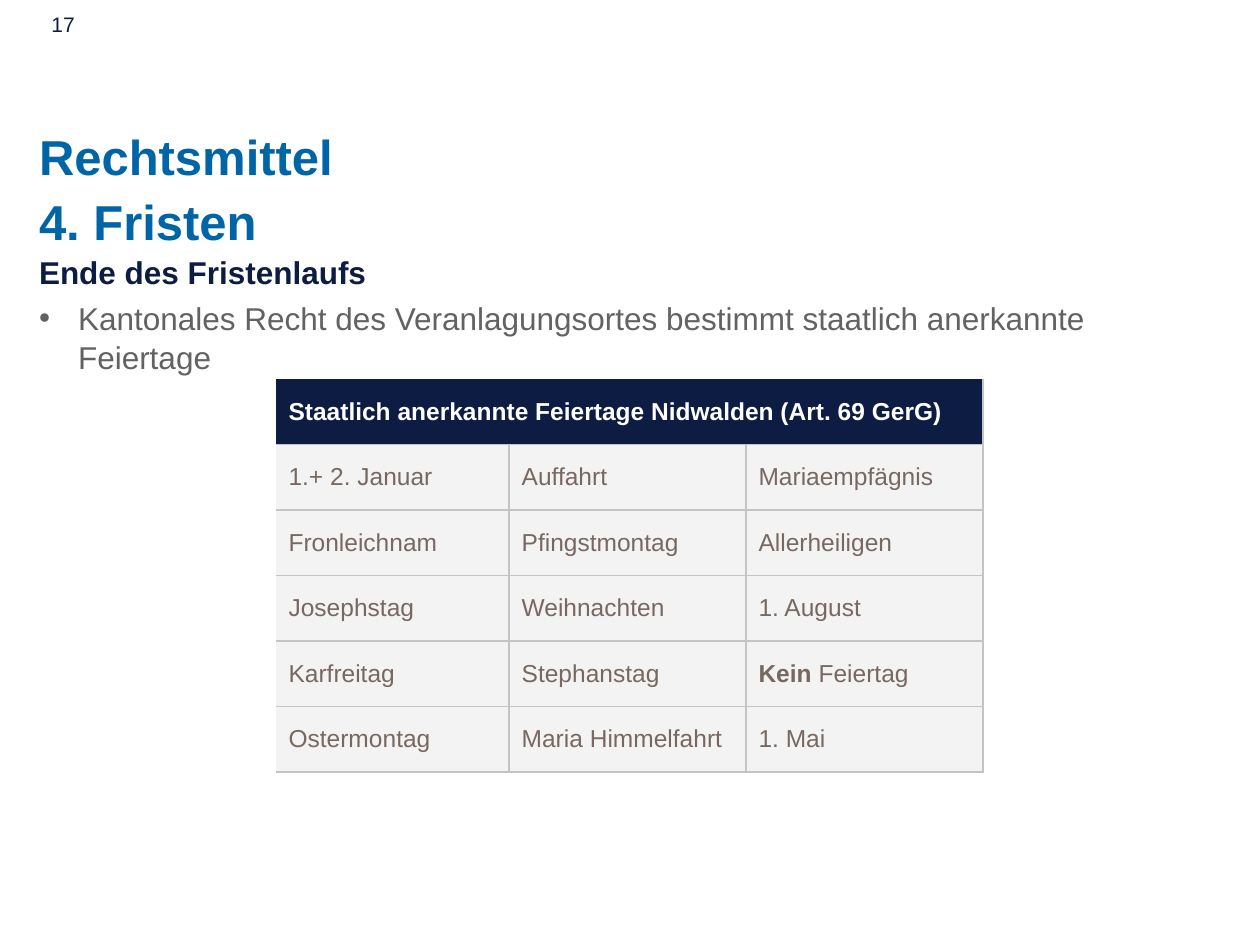
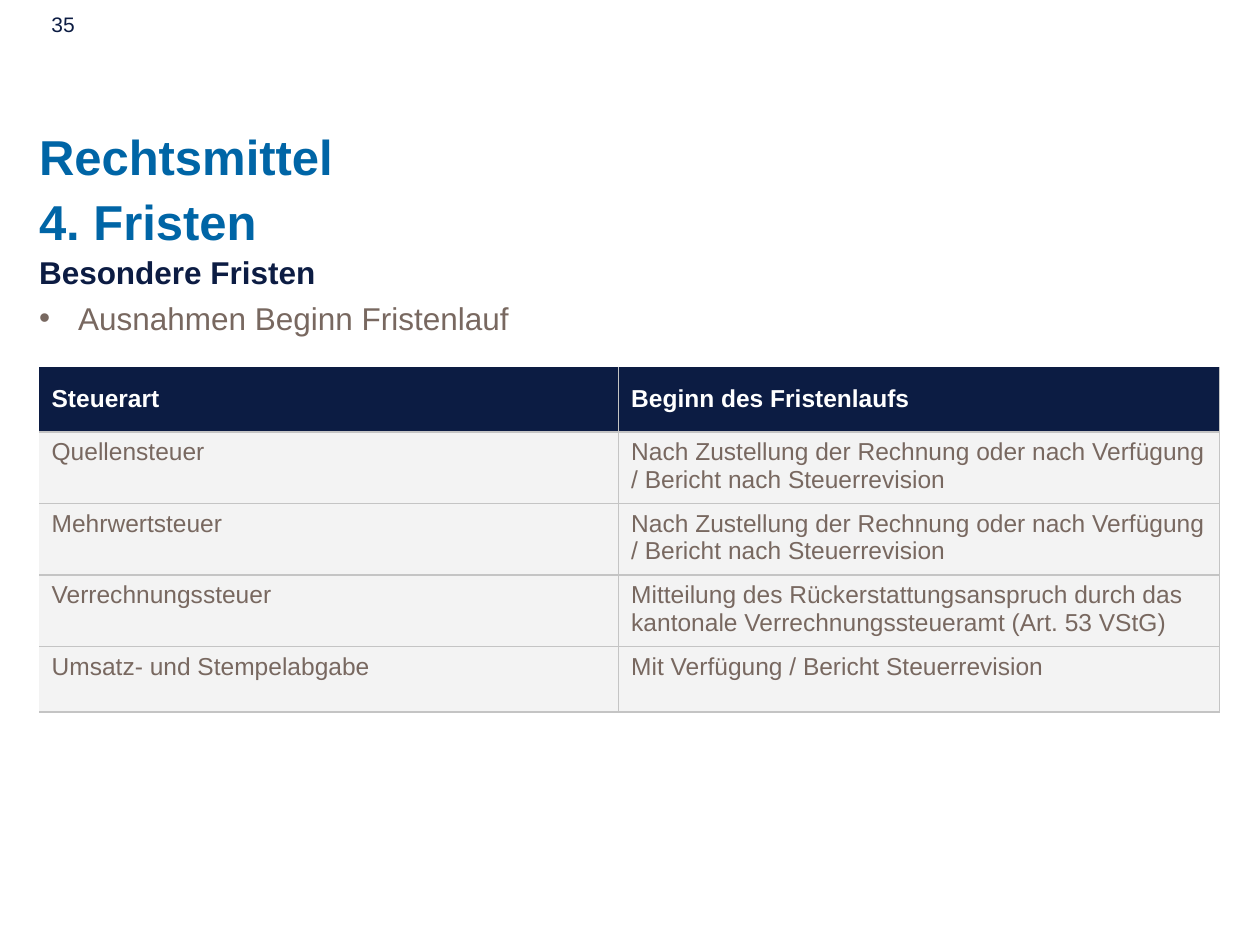
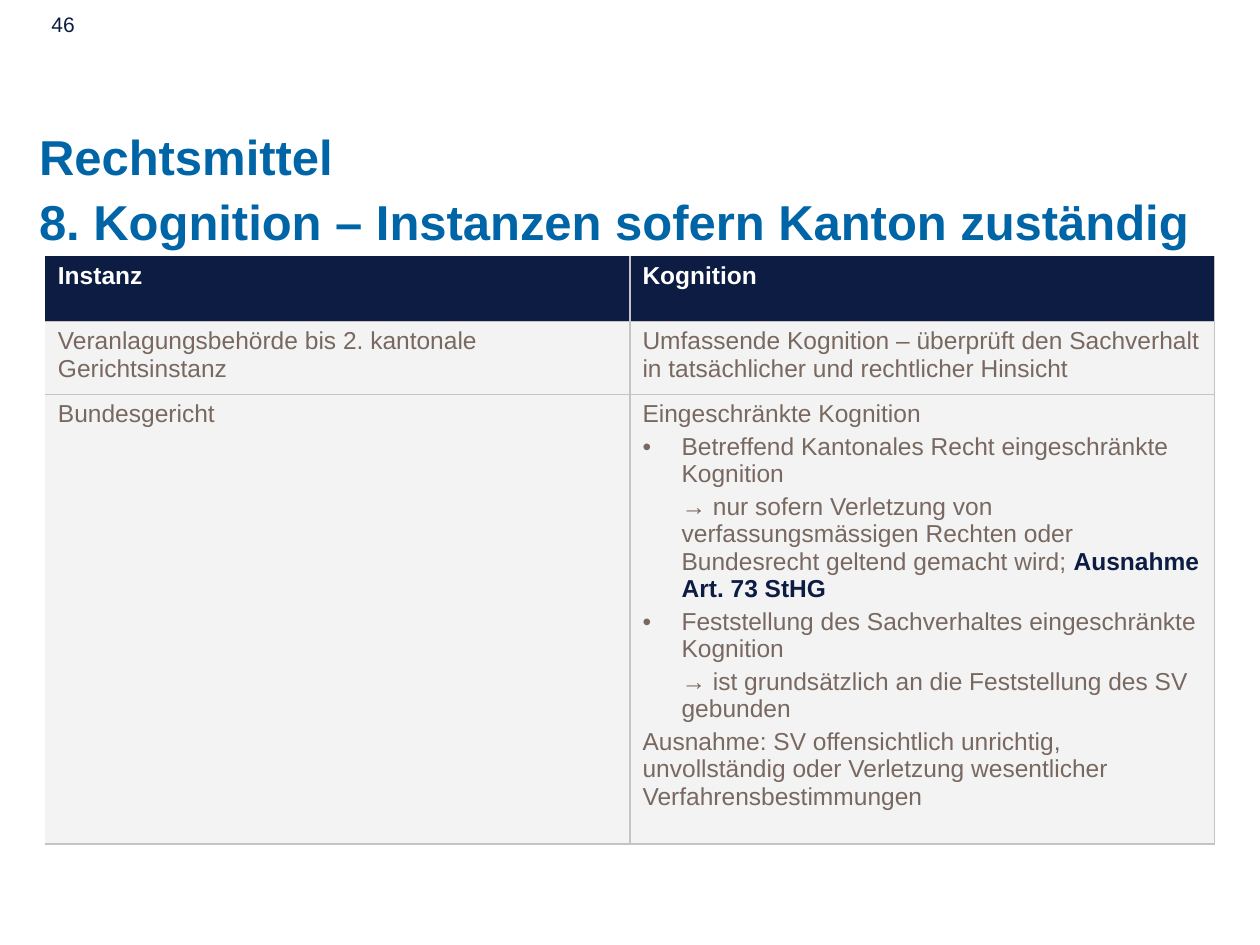
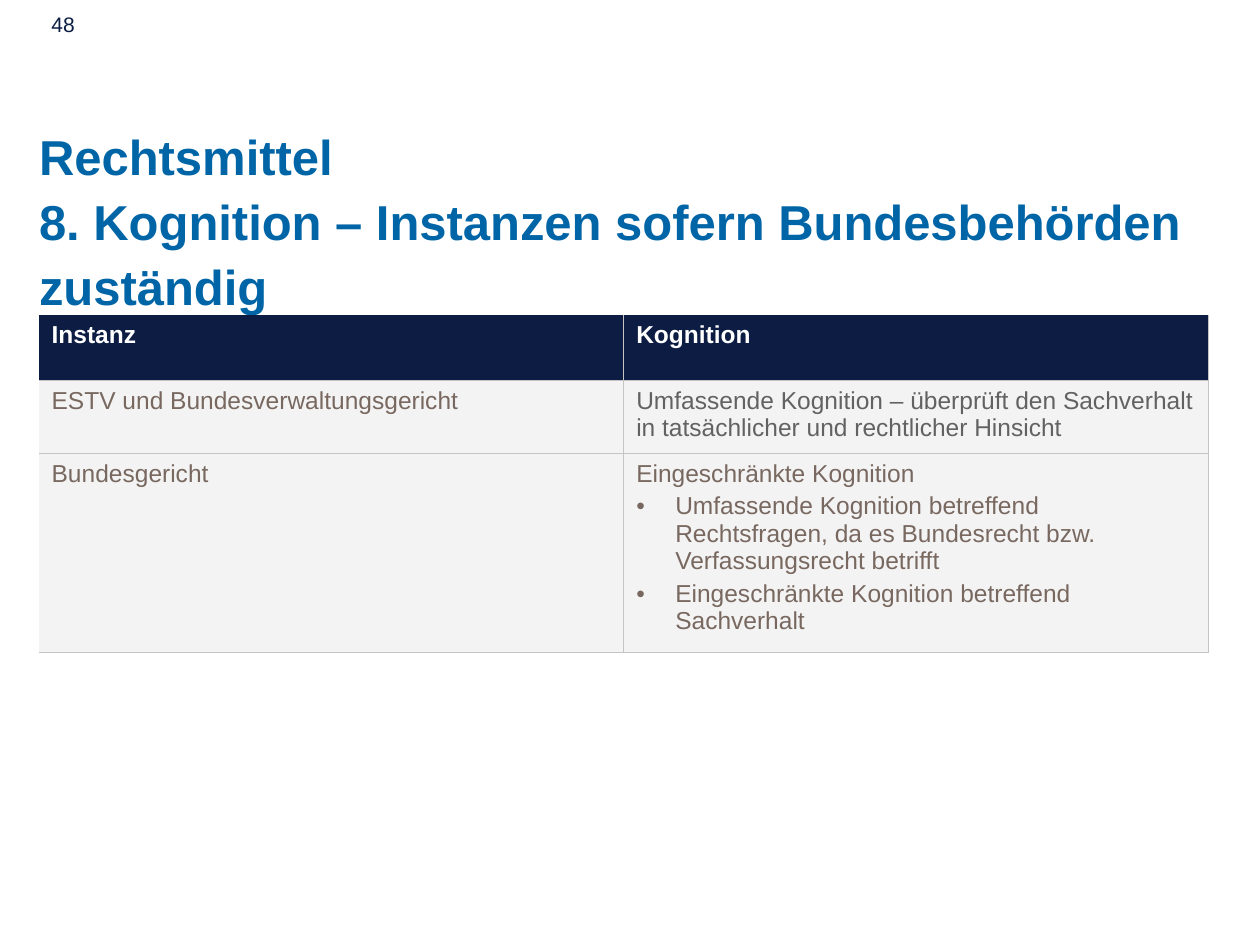
"""Build four slides on legal remedies, deadlines and scope of review."""
import dataclasses

import pptx
import pptx.dml.color
import pptx.enum.text
import pptx.oxml.ns
import pptx.util
from lxml import etree

COLORS = {
    "title": "0065A6",
    "navy": "0C1C43",
    "brown": "786860",
    "gray": "626262",
    "cell": "F3F3F3",
    "rule": "C4C4C4",
    "white": "FFFFFF",
}
FONT = "Arial"
WIDTH, HEIGHT = 10, 7.5
MARGIN = 0.31
CONTENT_WIDTH = WIDTH - 2 * MARGIN
INDENT = 0.31
ROW = 0.52
CELL_SIZE = 14
TOP, MIDDLE = pptx.enum.text.MSO_ANCHOR.TOP, pptx.enum.text.MSO_ANCHOR.MIDDLE


@dataclasses.dataclass
class Line:
    """One paragraph, with optional bold words before or after its text."""

    text: str
    color: str = "brown"
    bold: bool = False
    bullet: bool = False
    indented: bool = False
    bold_start: str = ""
    bold_end: str = ""
    bold_color: str = "brown"


def rgb(name):
    """Return a palette colour."""
    return pptx.dml.color.RGBColor.from_string(COLORS[name])


def add_element(parent, tag, **attributes):
    """Append a DrawingML element to its parent."""
    return etree.SubElement(parent, pptx.oxml.ns.qn(tag), attributes)


def style_font(font, size, color, bold=False):
    """Apply the deck's typeface with a size, colour and weight."""
    font.name = FONT
    font.size = pptx.util.Pt(size)
    font.bold = bold
    font.color.rgb = rgb(color)


def write_line(paragraph, line, size):
    """Write one line with its indent, bullet and emphasis."""
    properties = paragraph._p.get_or_add_pPr()
    if line.bullet or line.indented:
        indent = pptx.util.Inches(INDENT)
        properties.set("marL", str(indent))
        properties.set("indent", str(-indent if line.bullet else 0))
    if line.bullet:
        add_element(properties, "a:buFont", typeface=FONT)
        add_element(properties, "a:buChar", char="•")
    style_font(paragraph.font, size, line.color, line.bold)
    for words, strong in ((line.bold_start, True), (line.text, False), (line.bold_end, True)):
        if words:
            run = paragraph.add_run()
            run.text = words
            if strong:
                style_font(run.font, size, line.bold_color, True)


def write_lines(frame, lines, size, line_spacing=None):
    """Fill a text frame, with a fifth of the text size between lines."""
    for index, line in enumerate(lines):
        paragraph = frame.add_paragraph() if index else frame.paragraphs[0]
        if index:
            paragraph.space_before = pptx.util.Pt(size * 0.2)
        if line_spacing:
            paragraph.line_spacing = line_spacing
        write_line(paragraph, line, size)


def add_text(slide, top, height, width=CONTENT_WIDTH, inset=0):
    """Add a wrapping text area at the left margin and return its frame."""
    area = slide.shapes.add_textbox(*map(pptx.util.Inches, (MARGIN, top, width, height)))
    frame = area.text_frame
    frame.word_wrap = True
    if not inset:
        frame.margin_left = frame.margin_right = frame.margin_top = frame.margin_bottom = 0
    return frame


def add_page(deck, number, topic):
    """Add a slide with its page number and two-part title."""
    slide = deck.slides.add_slide(deck.slide_layouts[6])
    page = add_text(slide, 0.04, 0.29, 2.33, inset=1).paragraphs[0]
    page.text = str(number)
    style_font(page.font, 12, "navy")
    title = add_text(slide, 0.96, 1.06).paragraphs[0]
    title.text = f"Rechtsmittel\v{topic}"
    title.line_spacing = 1.1
    style_font(title.font, 28, "title", True)
    return slide


def add_body(slide, heading, point):
    """Add a bold heading and a bulleted point below the title."""
    write_lines(add_text(slide, 1.99, 4.17), [Line(heading, "navy", True), point], 18, 1.05)


def set_borders(cell, visible):
    """Draw thin rules on the named sides and clear the others."""
    properties = cell._tc.get_or_add_tcPr()
    for position, side in enumerate("LRTB"):
        edge = etree.Element(pptx.oxml.ns.qn(f"a:ln{side}"), w=str(pptx.util.Pt(1)))
        if side in visible:
            add_element(add_element(edge, "a:solidFill"), "a:srgbClr", val=COLORS["rule"])
        else:
            add_element(edge, "a:noFill")
        properties.insert(position, edge)


def fill_cell(cell, content, header, anchor):
    """Fill a cell from a string, a line or a list of lines."""
    cell.fill.solid()
    cell.fill.fore_color.rgb = rgb("navy" if header else "cell")
    cell.vertical_anchor = anchor
    if isinstance(content, str):
        content = Line(content, "white", True) if header else Line(content)
    write_lines(cell.text_frame, content if isinstance(content, list) else [content], CELL_SIZE)


def add_grid(slide, left, top, columns, heights, rows, anchors=(TOP, TOP)):
    """Add a ruled table; a short header row spans all columns."""
    frame = slide.shapes.add_table(
        len(rows), len(columns),
        *map(pptx.util.Inches, (left, top, sum(columns), sum(heights))))
    table = frame.table
    table.horz_banding = False
    for column, width in zip(table.columns, columns):
        column.width = pptx.util.Inches(width)
    for row, height in zip(table.rows, heights):
        row.height = pptx.util.Inches(height)
    if len(rows[0]) < len(columns):
        table.cell(0, 0).merge(table.cell(0, len(columns) - 1))
    for r, contents in enumerate(rows):
        for c, content in enumerate(contents):
            cell = table.cell(r, c)
            fill_cell(cell, content, r == 0, anchors[min(r, 1)])
            set_borders(cell, "RB" + ("T" if r else "") + ("L" if c else ""))


def add_holidays(deck):
    """Add the slide on the end of the deadline and public holidays."""
    slide = add_page(deck, 17, "4. Fristen")
    add_body(slide, "Ende des Fristenlaufs", Line(
        "Kantonales Recht des Veranlagungsortes bestimmt staatlich anerkannte Feiertage",
        "gray", bullet=True))
    rows = [
        ["Staatlich anerkannte Feiertage Nidwalden (Art. 69 GerG)"],
        ["1.+ 2. Januar", "Auffahrt", "Mariaempfägnis"],
        ["Fronleichnam", "Pfingstmontag", "Allerheiligen"],
        ["Josephstag", "Weihnachten", "1. August"],
        ["Karfreitag", "Stephanstag", Line("Feiertag", bold_start="Kein ")],
        ["Ostermontag", "Maria Himmelfahrt", "1. Mai"],
    ]
    add_grid(slide, 2.19, 3.01, [1.85, 1.88, 1.88], [ROW] * len(rows), rows, (MIDDLE, MIDDLE))


def add_special_deadlines(deck):
    """Add the slide on exceptions to the start of the deadline."""
    slide = add_page(deck, 35, "4. Fristen")
    add_body(slide, "Besondere Fristen", Line("Ausnahmen Beginn Fristenlauf", bullet=True))
    after_invoice = ("Nach Zustellung der Rechnung oder nach Verfügung "
                     "/ Bericht nach Steuerrevision")
    rows = [
        ["Steuerart", "Beginn des Fristenlaufs"],
        ["Quellensteuer", after_invoice],
        ["Mehrwertsteuer", after_invoice],
        ["Verrechnungssteuer", "Mitteilung des Rückerstattungsanspruch durch das "
                               "kantonale Verrechnungssteueramt (Art. 53 VStG)"],
        ["Umsatz- und Stempelabgabe", "Mit Verfügung / Bericht Steuerrevision"],
    ]
    add_grid(slide, MARGIN, 2.91, [4.6, 4.77], [ROW] + [0.54] * 3 + [ROW], rows, (MIDDLE, TOP))


def add_review(deck, number, authority, origin, height, first_instance, review_color, limits):
    """Add a slide comparing the scope of review of two instances."""
    slide = add_page(deck, number, f"8. Kognition – Instanzen sofern {authority} zuständig")
    full_review = Line("Umfassende Kognition – überprüft den Sachverhalt "
                       "in tatsächlicher und rechtlicher Hinsicht", review_color)
    rows = [
        ["Instanz", "Kognition"],
        [first_instance, full_review],
        ["Bundesgericht", [Line("Eingeschränkte Kognition"), *limits]],
    ]
    add_grid(slide, *origin, [4.64] * 2, [ROW, 0.58, height], rows)


def main():
    """Build and save the deck."""
    deck = pptx.Presentation()
    deck.slide_width = pptx.util.Inches(WIDTH)
    deck.slide_height = pptx.util.Inches(HEIGHT)
    add_holidays(deck)
    add_special_deadlines(deck)
    add_review(
        deck, 46, "Kanton", (0.36, 2.03), 3.57,
        "Veranlagungsbehörde bis 2. kantonale Gerichtsinstanz", "brown", [
            Line("Betreffend Kantonales Recht eingeschränkte Kognition", bullet=True),
            Line("→ nur sofern Verletzung von verfassungsmässigen Rechten oder "
                 "Bundesrecht geltend gemacht wird; ", indented=True,
                 bold_end="Ausnahme Art. 73 StHG", bold_color="navy"),
            Line("Feststellung des Sachverhaltes eingeschränkte Kognition", bullet=True),
            Line("→ ist grundsätzlich an die Feststellung des SV gebunden", indented=True),
            Line("Ausnahme: SV offensichtlich unrichtig, unvollständig oder "
                 "Verletzung wesentlicher Verfahrensbestimmungen"),
        ])
    add_review(
        deck, 48, "Bundesbehörden", (MARGIN, 2.5), 1.49,
        "ESTV und Bundesverwaltungsgericht", "gray", [
            Line("Umfassende Kognition betreffend Rechtsfragen, da es Bundesrecht "
                 "bzw. Verfassungsrecht betrifft", bullet=True),
            Line("Eingeschränkte Kognition betreffend Sachverhalt", bullet=True),
        ])
    deck.save("out.pptx")


if __name__ == "__main__":
    main()
